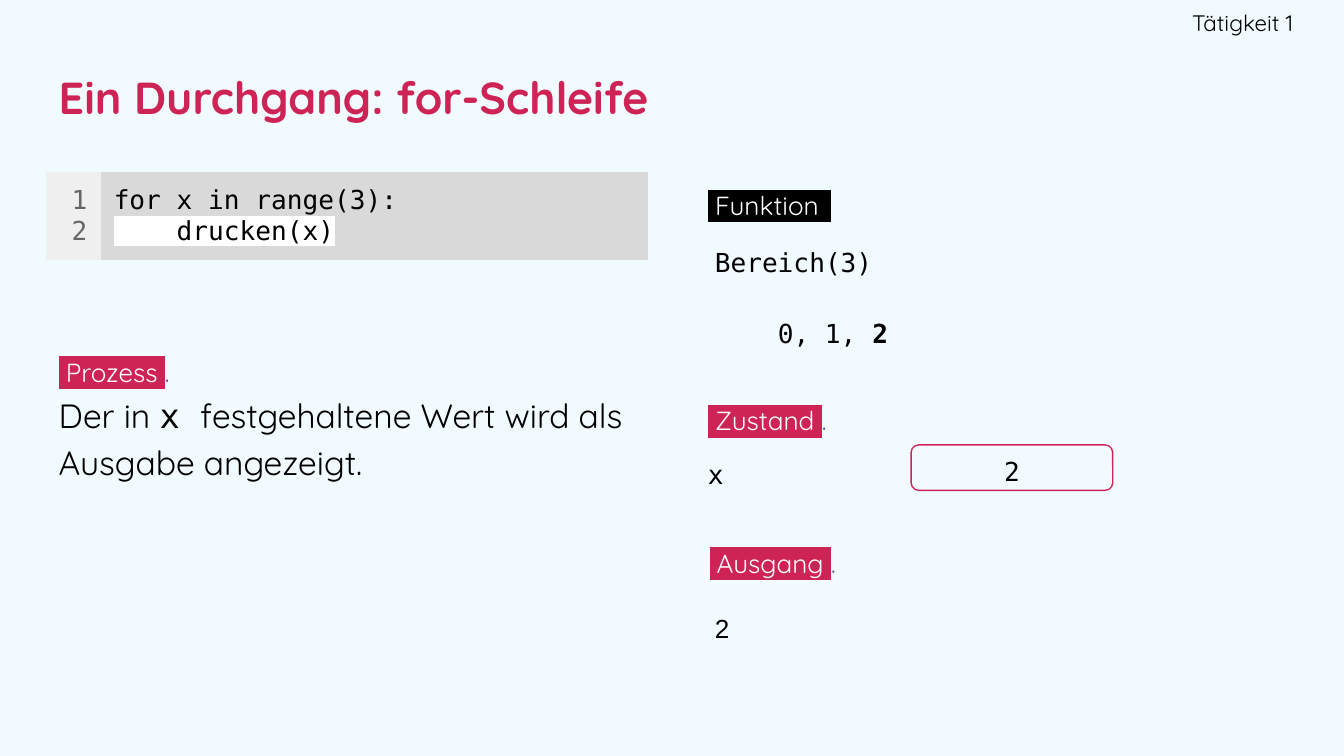
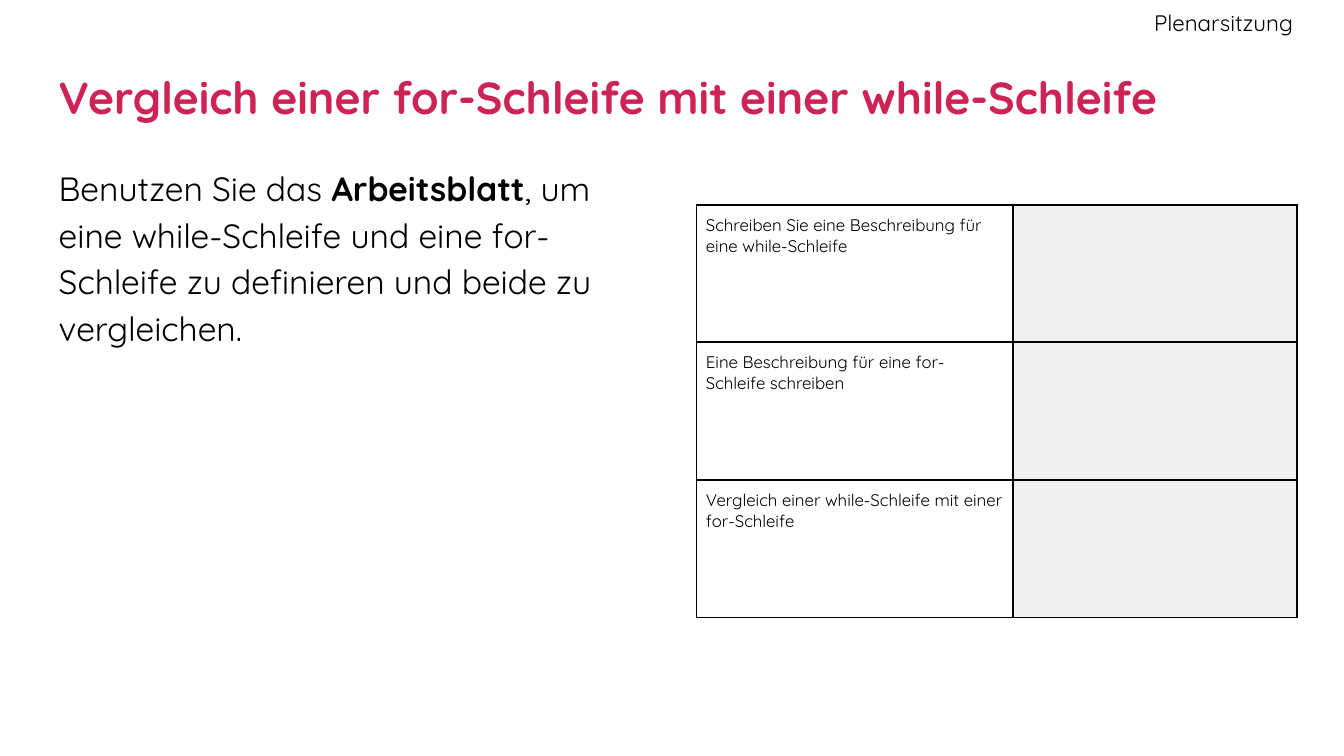
"""Build two slides on for and while loops."""
from dataclasses import dataclass

from lxml.etree import SubElement
from pptx import Presentation
from pptx.dml.color import RGBColor
from pptx.enum.shapes import MSO_SHAPE
from pptx.enum.text import MSO_ANCHOR, MSO_AUTO_SIZE, PP_ALIGN
from pptx.oxml.ns import qn
from pptx.util import Cm, Pt


@dataclass(frozen=True)
class Theme:
    accent: str = "CD2355"
    ink: str = "000000"
    paper: str = "FFFFFF"
    sky: str = "F1FAFF"
    dot: str = "5B5BA5"
    number: str = "666666"
    gutter: str = "EFEFEF"
    code: str = "D9D9D9"
    sans: str = "Quicksand"
    mono: str = "DejaVu Sans Mono"
    plain: str = "Arial"
    title: int = 24
    body: int = 18
    label: int = 14
    header: int = 12
    cell: int = 9


T = Theme()
NO_GRID = "{2D5ABB26-0587-4C30-8999-92F81FD0307C}"
LEFT, RIGHT = 0.86, 13.13
PAD = 0.25
MONO = dict(font=T.mono, size=T.label)

TRACE = dict(
    title="Ein Durchgang: for-Schleife", header="Tätigkeit 1", background=T.sky,
    body=["Der in ", ("x ", dict(font=T.mono)),
          "festgehaltene Wert wird als Ausgabe angezeigt."])
COMPARE = dict(
    title="Vergleich einer for-Schleife mit einer while-Schleife",
    header="Plenarsitzung", background=T.paper,
    body=["Benutzen Sie das ", ("Arbeitsblatt", dict(bold=True)),
          ", um eine while-Schleife und eine for-Schleife zu definieren "
          "und beide zu vergleichen."])
NUMBERS = ["1", "2"]
CODE = ["for x in range(3):", [("    drucken(x)", dict(highlight=T.paper))]]
LABELS = [
    ("Funktion", (RIGHT, 3.25), T.ink, dict(color=T.ink, highlight=T.ink)),
    ("Zustand", (RIGHT, 7.32), T.accent, dict(color=T.dot)),
    ("Ausgang", (RIGHT + 0.03, 10.01), T.accent, dict(color=T.dot)),
    ("Prozess", (LEFT, 6.4), T.accent, dict(color=T.dot)),
]
FUNCTION = "Bereich(3)"
SEQUENCE = ["0, 1, ", ("2", dict(bold=True))]
VARIABLE, VALUE, OUTPUT = "x", "2", "2"
TASKS = [
    "Schreiben Sie eine Beschreibung für eine while-Schleife",
    "Eine Beschreibung für eine for-Schleife schreiben",
    "Vergleich einer while-Schleife mit einer for-Schleife",
]


def rgb(color):
    """Turn a hex string into a colour."""
    return RGBColor.from_string(color)


def add_run(p, text, font=T.sans, size=T.body, color=T.ink, bold=False,
            highlight=None):
    """Append one formatted run to a paragraph."""
    r = p.add_run()
    r.text = text
    r.font.name, r.font.size, r.font.bold = font, Pt(size), bold
    r.font.color.rgb = rgb(color)
    if highlight:
        rpr = r.font._element
        mark = SubElement(rpr, qn("a:highlight"))
        SubElement(mark, qn("a:srgbClr"), val=highlight)
        rpr.find(qn("a:solidFill")).addnext(mark)


def write(tf, paragraphs, align=PP_ALIGN.LEFT, spacing=None, **fmt):
    """Fill a text frame; a paragraph is a string or a list of runs."""
    for i, runs in enumerate(paragraphs):
        p = tf.add_paragraph() if i else tf.paragraphs[0]
        p.alignment = align
        if spacing:
            p.line_spacing = spacing
        for run in [runs] if isinstance(runs, str) else runs:
            text, extra = (run, {}) if isinstance(run, str) else run
            add_run(p, text, **{**fmt, **extra})


def set_frame(tf, anchor=MSO_ANCHOR.TOP, insets=(PAD,) * 4):
    """Set wrapping, anchor and insets (left, top, right, bottom)."""
    tf.word_wrap, tf.auto_size = True, MSO_AUTO_SIZE.NONE
    tf.vertical_anchor = anchor
    (tf.margin_left, tf.margin_top,
     tf.margin_right, tf.margin_bottom) = map(Cm, insets)


def add_text(s, box, paragraphs, anchor=MSO_ANCHOR.TOP, insets=(PAD,) * 4, **fmt):
    """Add a text box and return its text frame."""
    tf = s.shapes.add_textbox(*map(Cm, box)).text_frame
    set_frame(tf, anchor, insets)
    write(tf, paragraphs, **fmt)
    return tf


def add_base(prs, content, body_box):
    """Add a slide with its background, title, header and body text."""
    s = prs.slides.add_slide(prs.slide_layouts[5])
    s.background.fill.solid()
    s.background.fill.fore_color.rgb = rgb(content["background"])
    title = s.shapes.title
    title.left, title.top, title.width, title.height = map(
        Cm, (LEFT, 0.86, 23.67, 1.93))
    set_frame(title.text_frame, MSO_ANCHOR.MIDDLE)
    write(title.text_frame, [content["title"]], size=T.title, color=T.accent,
          bold=True)
    add_text(s, (19, 0, 5.44, 0.86), [content["header"]], MSO_ANCHOR.MIDDLE,
             (PAD, PAD, 0, PAD), align=PP_ALIGN.RIGHT, size=T.header)
    add_text(s, body_box, [content["body"]], spacing=1.15)
    return s


def add_grid(s, left, top, widths, heights):
    """Add an unstyled table."""
    frame = s.shapes.add_table(len(heights), len(widths), Cm(left), Cm(top),
                               Cm(sum(widths)), Cm(sum(heights)))
    table = frame.table
    table.first_row = table.horz_banding = False
    table._tbl.tblPr.find(qn("a:tableStyleId")).text = NO_GRID
    for column, width in zip(table.columns, widths):
        column.width = Cm(width)
    for row, height in zip(table.rows, heights):
        row.height = Cm(height)
    return table


def fill_cell(cell, paragraphs, fill=None, pad=PAD, border=None, **fmt):
    """Format one table cell and write its text."""
    (cell.margin_left, cell.margin_top,
     cell.margin_right, cell.margin_bottom) = (Cm(pad),) * 4
    if border:
        tcpr = cell._tc.get_or_add_tcPr()
        for side in ("lnL", "lnR", "lnT", "lnB"):
            ln = SubElement(tcpr, qn(f"a:{side}"), w=str(Pt(1)))
            SubElement(SubElement(ln, qn("a:solidFill")), qn("a:srgbClr"),
                       val=border)
    if fill:
        cell.fill.solid()
        cell.fill.fore_color.rgb = rgb(fill)
    else:
        cell.fill.background()
    write(cell.text_frame, paragraphs, **fmt)


def add_label(s, text, place, fill, dot):
    """Add a highlighted section label followed by a dot."""
    runs = [(f" {text} ", dict(color=T.paper, highlight=fill)), (".", dot)]
    add_text(s, (*place, 5.92, 1.02), [runs], insets=(PAD, PAD, 0.15, PAD),
             size=T.label, spacing=1.14)


def add_value_box(s):
    """Add the rounded box that holds the value of the variable."""
    sp = s.shapes.add_shape(MSO_SHAPE.ROUNDED_RECTANGLE,
                            *map(Cm, (17.22, 8.41, 3.81, 0.86)))
    sp.shadow.inherit = False
    sp.fill.background()
    sp.line.color.rgb, sp.line.width = rgb(T.accent), Pt(0.75)
    set_frame(sp.text_frame, MSO_ANCHOR.MIDDLE, (PAD, 0.05, PAD, 0))
    write(sp.text_frame, [VALUE], align=PP_ALIGN.CENTER, spacing=1.15, **MONO)


def build_trace(prs):
    """Build the walk-through of the for loop."""
    s = add_base(prs, TRACE, (LEFT, 7.11, 11.38, 5.87))
    code = add_grid(s, LEFT, 3.25, (1.04, 10.34), (1.1,))
    fill_cell(code.cell(0, 0), NUMBERS, T.gutter, align=PP_ALIGN.RIGHT,
              color=T.number, **MONO)
    fill_cell(code.cell(0, 1), CODE, T.code, **MONO)
    for label in LABELS:
        add_label(s, *label)
    tf = add_text(s, (13.26, 4.32, 9.17, 2.62), [FUNCTION, SEQUENCE],
                  spacing=1.15, **MONO)
    sequence = tf.paragraphs[1]
    sequence.space_before = Pt(19)
    sequence._p.get_or_add_pPr().set("marL", str(Cm(1.19)))
    add_text(s, (RIGHT, 8.33, 3.4, 1.02), [VARIABLE], spacing=1.15, **MONO)
    add_value_box(s)
    add_text(s, (13.26, 11.23, 3.4, 1.02), [OUTPUT], spacing=1.15,
             font=T.plain, size=T.label)


def build_compare(prs):
    """Build the worksheet slide with its table."""
    s = add_base(prs, COMPARE, (LEFT, 2.82, 11.38, 10.16))
    table = add_grid(s, 13.16, 3.87, (5.99, 5.36), (2.6,) * len(TASKS))
    for i, task in enumerate(TASKS):
        fill_cell(table.cell(i, 0), [task], pad=0.18, border=T.ink, size=T.cell)
        fill_cell(table.cell(i, 1), [], T.gutter, pad=0.18, border=T.ink)


def main():
    """Create and save the presentation."""
    prs = Presentation()
    prs.slide_width, prs.slide_height = Cm(25.4), Cm(14.29)
    build_trace(prs)
    build_compare(prs)
    prs.save("out.pptx")


if __name__ == "__main__":
    main()
